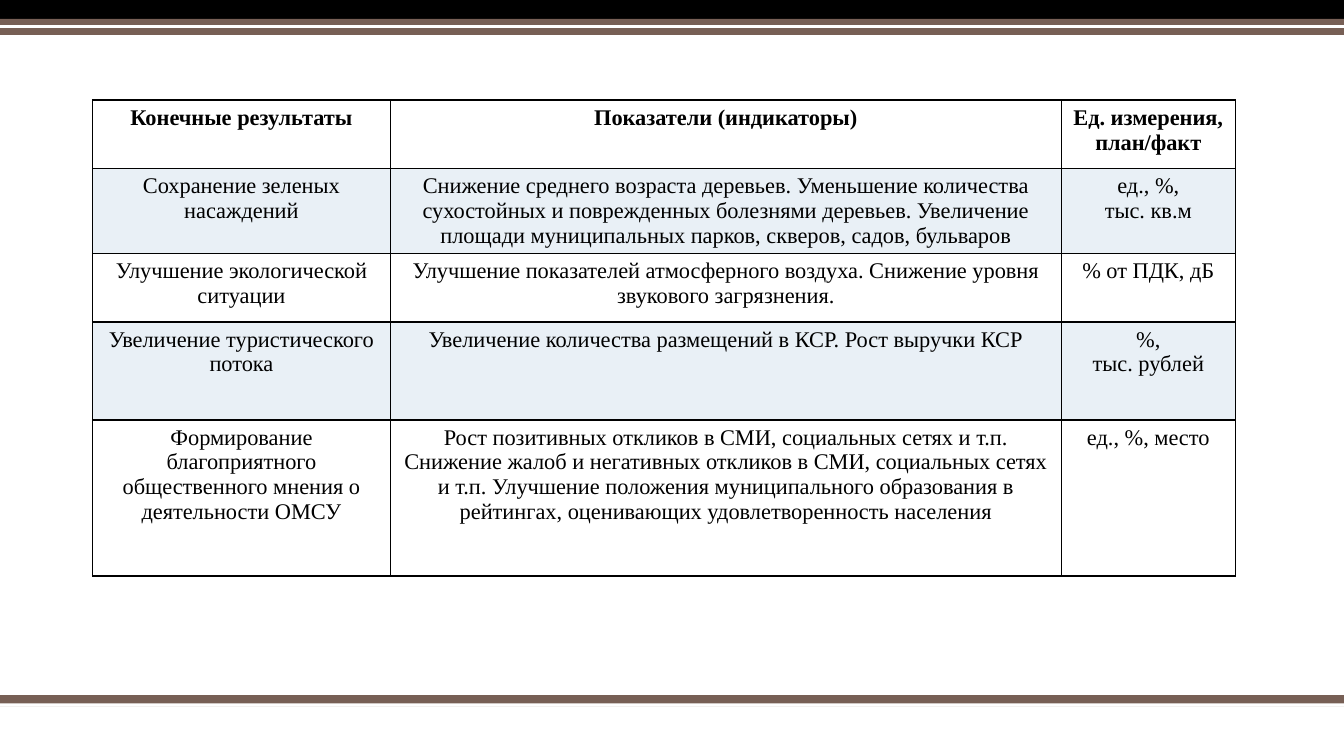
from lxml.etree import SubElement
from pptx import Presentation
from pptx.dml.color import RGBColor
from pptx.enum.shapes import MSO_SHAPE
from pptx.enum.text import PP_ALIGN
from pptx.oxml.ns import qn
from pptx.util import Pt

COLORS = {
    "brown": "775F55",
    "black": "000000",
    "white": "FFFFFF",
    "blue": "94B6D2",
}
SLIDE_WIDTH, SLIDE_HEIGHT = 960, 540

COLUMN_WIDTHS = [213, 479, 124.5]
ROW_HEIGHTS = [49, 60.5, 49, 70, 111.5]
ROWS = [
    ["Конечные результаты", "Показатели (индикаторы)", "Ед. измерения, план/факт"],
    ["Сохранение зеленых насаждений",
     "Снижение среднего возраста деревьев. Уменьшение количества сухостойных и "
     "поврежденных болезнями деревьев. Увеличение площади муниципальных парков, "
     "скверов, садов, бульваров",
     "ед., %,\nтыс. кв.м"],
    ["Улучшение экологической ситуации",
     "Улучшение показателей атмосферного воздуха. Снижение уровня звукового загрязнения.",
     "% от ПДК, дБ"],
    ["Увеличение туристического потока",
     "Увеличение количества размещений в КСР. Рост выручки КСР",
     "%,\nтыс. рублей"],
    ["Формирование благоприятного общественного мнения о деятельности ОМСУ",
     "Рост позитивных откликов в СМИ, социальных сетях и т.п. Снижение жалоб и "
     "негативных откликов в СМИ, социальных сетях и т.п. Улучшение положения "
     "муниципального образования в рейтингах, оценивающих удовлетворенность населения",
     "ед., %, место"],
]


class SlideBuilder:
    """Holds the slide and its style; one method per kind of element."""

    font_name = "Times New Roman"
    font_size = 16
    border_width = 1
    band_opacity = 20

    def __init__(self, slide):
        self.slide = slide

    def color(self, name):
        return RGBColor.from_string(COLORS[name])

    def stripe(self, top, height, color):
        shape = self.slide.shapes.add_shape(
            MSO_SHAPE.RECTANGLE, 0, Pt(top), Pt(SLIDE_WIDTH), Pt(height))
        shape.shadow.inherit = False
        shape.fill.solid()
        shape.fill.fore_color.rgb = self.color(color)
        shape.line.fill.background()

    def table(self, left, top, widths, heights, rows):
        table = self.slide.shapes.add_table(
            len(rows), len(widths), Pt(left), Pt(top),
            Pt(sum(widths)), Pt(sum(heights))).table
        table.first_row = table.horz_banding = False
        for column, width in zip(table.columns, widths):
            column.width = Pt(width)
        for row_index, (height, texts) in enumerate(zip(heights, rows)):
            table.rows[row_index].height = Pt(height)
            for column_index, text in enumerate(texts):
                cell = table.cell(row_index, column_index)
                self.cell_borders(cell)
                self.cell_fill(cell, banded=row_index % 2 == 1)
                self.cell_text(cell, text, bold=row_index == 0)

    def cell_borders(self, cell):
        properties = cell._tc.get_or_add_tcPr()
        for side in ("a:lnL", "a:lnR", "a:lnT", "a:lnB"):
            line = SubElement(properties, qn(side), w=str(Pt(self.border_width)))
            fill = SubElement(line, qn("a:solidFill"))
            SubElement(fill, qn("a:srgbClr"), val=COLORS["black"])

    def cell_fill(self, cell, banded):
        if not banded:
            cell.fill.background()
            return
        cell.fill.solid()
        cell.fill.fore_color.rgb = self.color("blue")
        color = cell._tc.tcPr.find(qn("a:solidFill")).find(qn("a:srgbClr"))
        SubElement(color, qn("a:alpha"), val=str(self.band_opacity * 1000))

    def cell_text(self, cell, text, bold):
        frame = cell.text_frame
        for index, line in enumerate(text.split("\n")):
            paragraph = frame.add_paragraph() if index else frame.paragraphs[0]
            paragraph.alignment = PP_ALIGN.CENTER
            run = paragraph.add_run()
            run.text = line
            run.font.name = self.font_name
            run.font.size = Pt(self.font_size)
            run.font.bold = bold
            run.font.color.rgb = self.color("black")


def main():
    presentation = Presentation()
    presentation.slide_width = Pt(SLIDE_WIDTH)
    presentation.slide_height = Pt(SLIDE_HEIGHT)
    slide = presentation.slides.add_slide(presentation.slide_layouts[6])
    builder = SlideBuilder(slide)

    # Bottom stripes
    builder.stripe(496.5, 8, "brown")
    builder.stripe(502.5, 2, "white")

    # Top stripes
    builder.stripe(0, 13.5, "black")
    builder.stripe(13.5, 11.5, "brown")
    builder.stripe(18, 2, "white")

    # Results and indicators
    builder.table(66, 71.5, COLUMN_WIDTHS, ROW_HEIGHTS, ROWS)

    presentation.save("out.pptx")


if __name__ == "__main__":
    main()
